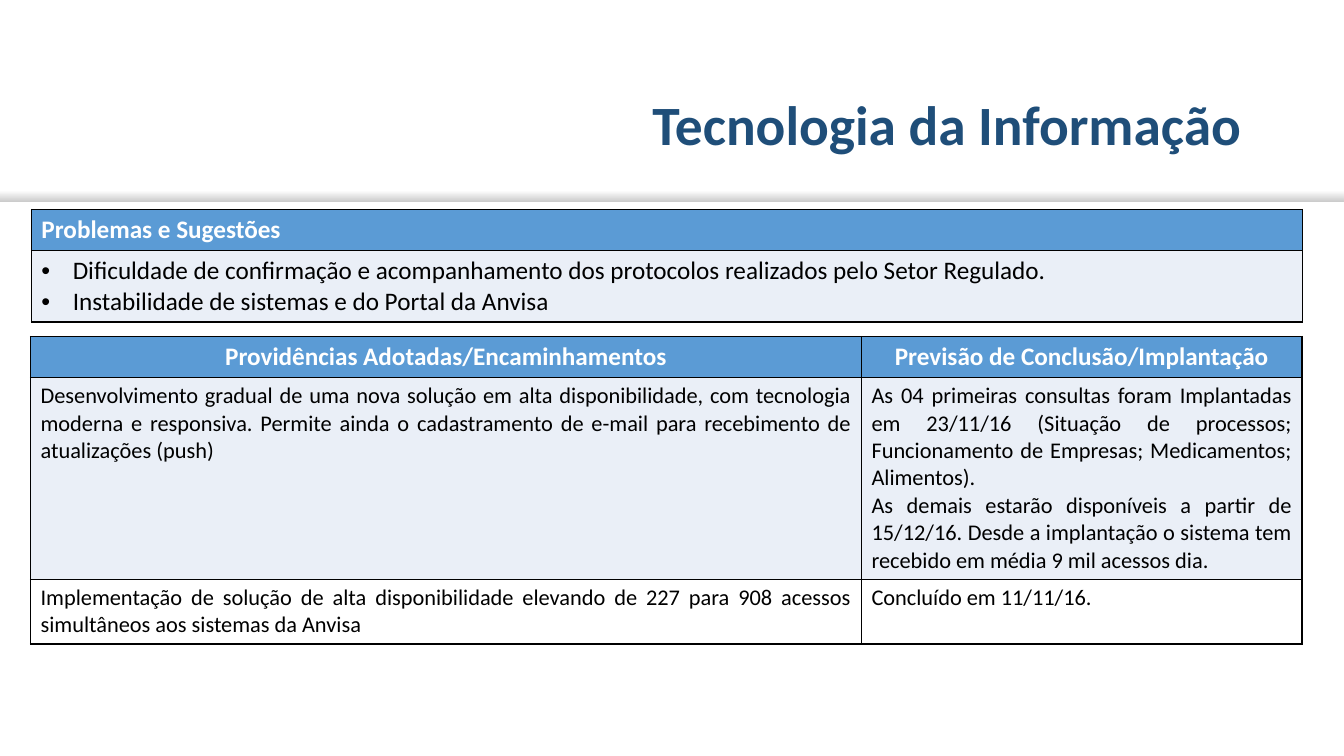
from lxml import etree
from pptx import Presentation
from pptx.dml.color import RGBColor
from pptx.enum import shapes, text
from pptx.oxml import parse_xml
from pptx.oxml.ns import nsdecls, qn
from pptx.util import Cm, Pt

WHITE = RGBColor(0xFF, 0xFF, 0xFF)
BLACK = RGBColor(0, 0, 0)
GRAY = RGBColor(0xCC, 0xCC, 0xCC)
NAVY = RGBColor(0x1F, 0x4E, 0x79)
BLUE = RGBColor(0x5B, 0x9B, 0xD5)
PALE = RGBColor(0xEA, 0xEF, 0xF7)
LEFT, CENTER, RIGHT, JUSTIFY = (
    text.PP_ALIGN.LEFT, text.PP_ALIGN.CENTER, text.PP_ALIGN.RIGHT, text.PP_ALIGN.JUSTIFY)


def format_paragraph(p, size, color, bold, align):
    p.alignment = align
    for r in p.runs:
        r.font.name = "Calibri"
        r.font.size = Pt(size)
        r.font.bold = bold
        r.font.color.rgb = color


def fill_cell(cell, content, fill):
    tcPr = cell._tc.get_or_add_tcPr()
    for side in ("lnL", "lnR", "lnT", "lnB"):
        tcPr.append(parse_xml(
            f'<a:{side} {nsdecls("a")} w="12700"><a:solidFill>'
            f'<a:srgbClr val="{BLACK}"/></a:solidFill></a:{side}>'))
    cell.fill.solid()
    cell.fill.fore_color.rgb = fill
    cell.text_frame.text = content


prs = Presentation()
prs.slide_width, prs.slide_height = Cm(33.87), Cm(19.05)
s = prs.slides.add_slide(prs.slide_layouts[5])

divider = s.shapes.add_shape(shapes.MSO_SHAPE.RECTANGLE, 0, Cm(4.8), Cm(33.86), Cm(0.28))
divider.shadow.inherit = False
divider.line.fill.background()
divider.fill.gradient()
divider.fill.gradient_angle = 270
for stop, color in zip(divider.fill.gradient_stops, (WHITE, GRAY)):
    stop.color.rgb = color

title = s.shapes.title
title.left, title.top, title.width, title.height = Cm(2.33), Cm(1.53), Cm(29.21), Cm(3.35)
tf = title.text_frame
tf.text = "Tecnologia da Informação"
tf.vertical_anchor = text.MSO_ANCHOR.MIDDLE
tf.paragraphs[0].line_spacing = 0.9
format_paragraph(tf.paragraphs[0], 39.6, NAVY, True, RIGHT)

problems = [
    ["Problemas e Sugestões"],
    ["Dificuldade de confirmação e acompanhamento dos protocolos realizados pelo Setor Regulado.\n"
     "Instabilidade de sistemas e do Portal da Anvisa"],
]
actions = [
    ["Providências Adotadas/Encaminhamentos", "Previsão de Conclusão/Implantação"],
    ["Desenvolvimento gradual de uma nova solução em alta disponibilidade, com tecnologia moderna "
     "e responsiva. Permite ainda o cadastramento de e-mail para recebimento de atualizações (push)",
     "As 04 primeiras consultas foram Implantadas em 23/11/16 (Situação de processos; "
     "Funcionamento de Empresas; Medicamentos; Alimentos).\n"
     "As demais estarão disponíveis a partir de 15/12/16. Desde a implantação o sistema tem "
     "recebido em média 9 mil acessos dia."],
    ["Implementação de solução de alta disponibilidade elevando de 227 para 908 acessos "
     "simultâneos aos sistemas da Anvisa", "Concluído em 11/11/16."],
]
tables = [
    (problems, 0.79, 5.28, [32.04], [1.03, 1.78], 18, LEFT, LEFT),
    (actions, 0.77, 8.48, [20.94, 11.1], [1.03, 5.08, 1.6], 16, CENTER, JUSTIFY),
]

for rows, left, top, widths, heights, size, head_align, body_align in tables:
    table = s.shapes.add_table(len(rows), len(widths), Cm(left), Cm(top),
                               Cm(sum(widths)), Cm(sum(heights))).table
    for column, width in zip(table.columns, widths):
        column.width = Cm(width)
    for i, (row, height) in enumerate(zip(rows, heights)):
        table.rows[i].height = Cm(height)
        for j, content in enumerate(row):
            cell = table.cell(i, j)
            fill_cell(cell, content, (BLUE, PALE, WHITE)[i])
            for p in cell.text_frame.paragraphs:
                if i and rows is problems:
                    pPr = p._p.get_or_add_pPr()
                    pPr.set("marL", str(Cm(0.79)))
                    pPr.set("indent", str(Cm(-0.79)))
                    etree.SubElement(pPr, qn("a:buFont"), typeface="Arial")
                    etree.SubElement(pPr, qn("a:buChar"), char="•")
                if i:
                    format_paragraph(p, size, BLACK, False, body_align)
                else:
                    format_paragraph(p, 18, WHITE, True, head_align)

prs.save("out.pptx")
